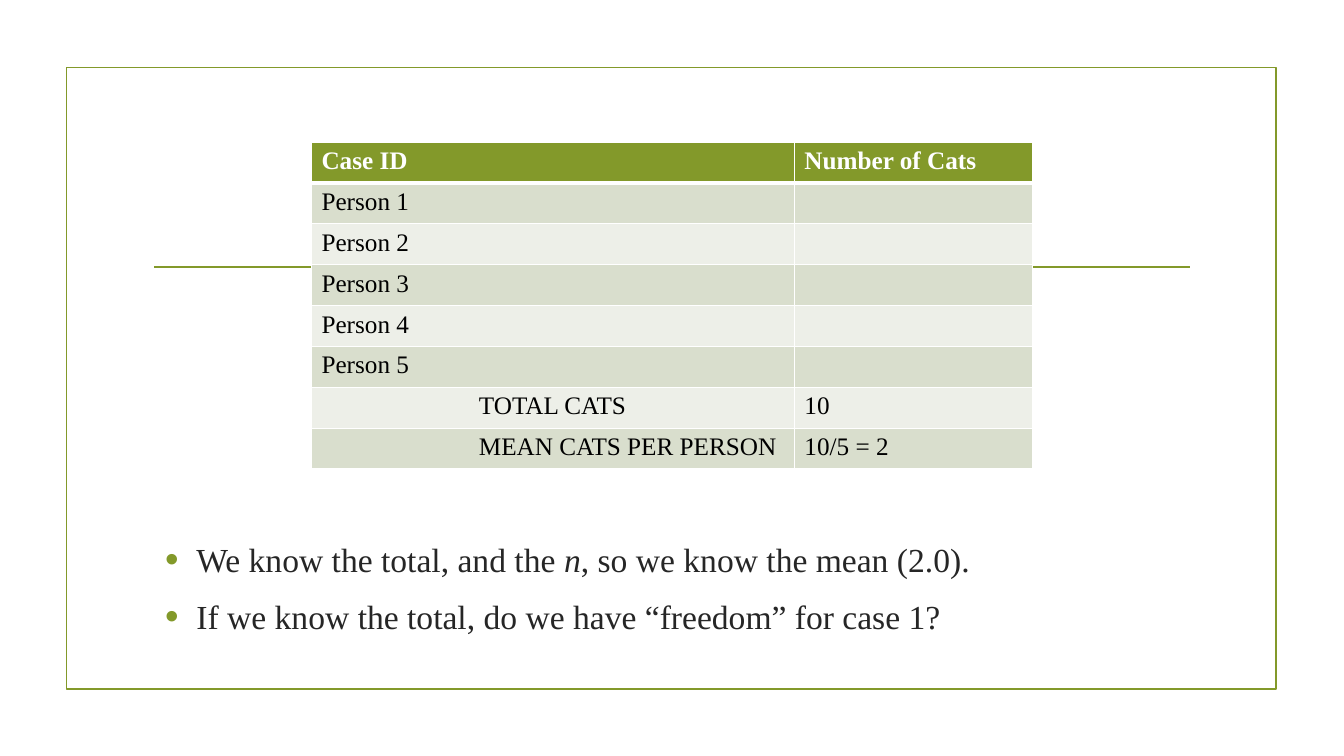
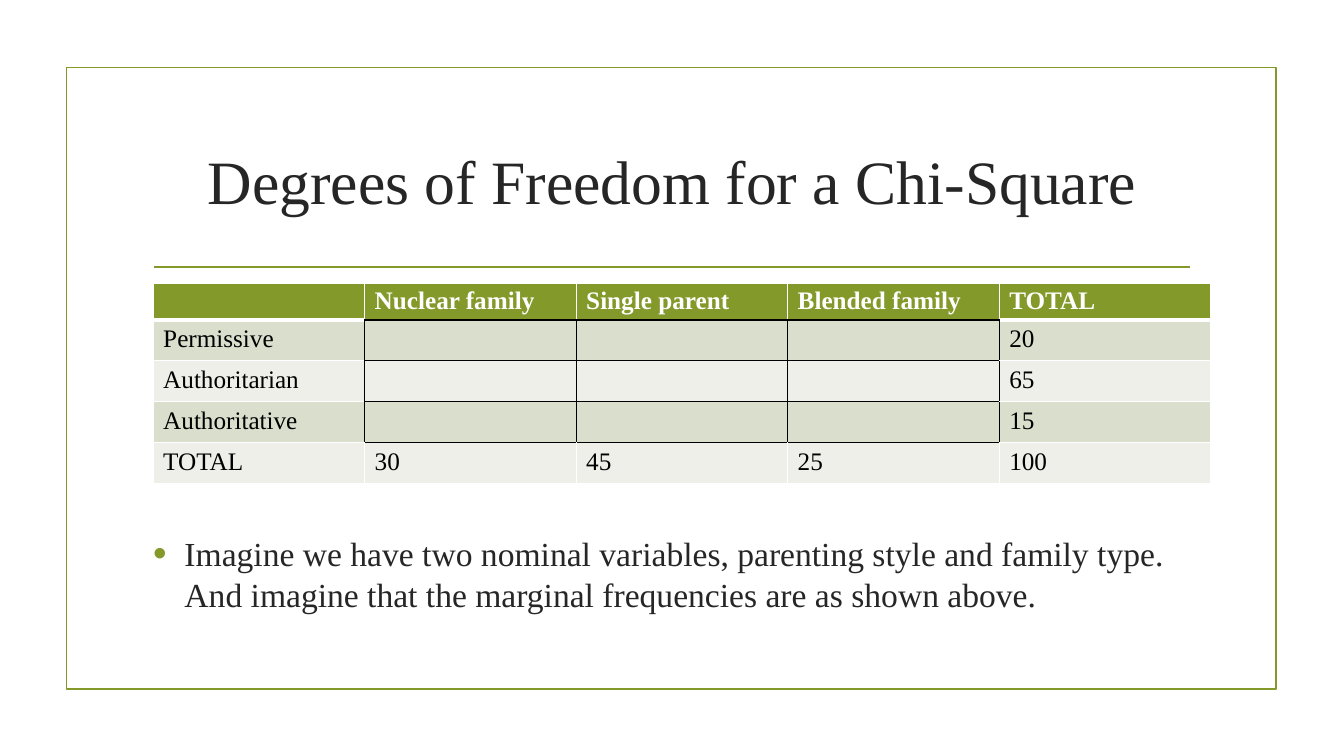
"""Build two slides on degrees of freedom, each with a table and bullets."""
from lxml import etree
from pptx import Presentation
from pptx.dml.color import RGBColor
from pptx.enum.shapes import MSO_CONNECTOR, MSO_SHAPE
from pptx.enum.text import MSO_ANCHOR, PP_ALIGN
from pptx.oxml.ns import qn
from pptx.util import Cm, Pt

RECT = MSO_SHAPE.RECTANGLE
LINE = MSO_CONNECTOR.STRAIGHT
MID = MSO_ANCHOR.MIDDLE
CENTER = PP_ALIGN.CENTER
FONT = "Times New Roman"
HUE = {"green": "83992A", "ink": "262626", "black": "000000",
       "white": "FFFFFF", "dark": "D9DECD", "light": "EDEFE8"}
WIDE = 26.67
ROW = 1.03
SIDES = {"lnL": (0, -1), "lnR": (0, 1), "lnT": (-1, 0), "lnB": (1, 0)}

SLIDES = [
    {
        "title": None,
        "points": [
            [("We know the total, and the ", False), ("n", True),
             (", so we know the mean (2.0).", False)],
            [("If we know the total, do we have “freedom” for case 1?", False)],
        ],
        "box": (3.91, 13.46, 3.6),
        "rows": [
            ("Case ID", "Number of Cats"),
            *[(f"Person {n}", "") for n in range(1, 6)],
            ("TOTAL CATS", "10"),
            ("MEAN CATS PER PERSON", "10/5 = 2"),
        ],
        "at": (7.85, 3.58), "cols": (12.17, 5.99), "head": ROW, "pad": 0.13,
        "core": set(), "inset": {(6, 0), (7, 0)},
    },
    {
        "title": "Degrees of Freedom for a Chi-Square",
        "points": [
            [("Imagine we have two nominal variables, parenting style and family "
              "type. And imagine that the marginal frequencies are as shown above.",
              False)],
        ],
        "box": (3.61, 13.31, 3.1),
        "rows": [
            ("", "Nuclear family", "Single parent", "Blended family", "TOTAL"),
            ("Permissive", "", "", "", "20"),
            ("Authoritarian", "", "", "", "65"),
            ("Authoritative", "", "", "", "15"),
            ("TOTAL", "30", "45", "25", "100"),
        ],
        "at": (3.86, 7.14), "cols": (5.33,) * 5, "head": 0.9, "pad": 0.08,
        "core": {(r, c) for r in range(1, 4) for c in range(1, 4)},
        "inset": set(),
    },
]


def rgb(name):
    return RGBColor.from_string(HUE[name])


def sub(node, tag, **attrs):
    return etree.SubElement(node, qn(f"a:{tag}"), attrs)


def add_run(para, text, size, hue, bold=False, slant=False):
    run = para.add_run()
    run.text = text
    font = run.font
    font.name, font.size, font.bold, font.italic = FONT, Pt(size), bold, slant
    font.color.rgb = rgb(hue)


def add_frame(slide):
    frame = slide.shapes.add_shape(RECT, Cm(1.68), Cm(1.7), Cm(30.48), Cm(15.67))
    frame.shadow.inherit = False
    frame.fill.background()
    rule = slide.shapes.add_connector(LINE, Cm(3.89), Cm(6.73), Cm(30), Cm(6.73))
    sub(rule._element.spPr, "effectLst")
    for shape in (frame, rule):
        shape.line.color.rgb = rgb("green")
        shape.line.width = Pt(1.25)


def add_box(slide, left, top, high):
    box = slide.shapes.add_textbox(Cm(left), Cm(top), Cm(WIDE), Cm(high))
    box.text_frame.word_wrap = True
    return box.text_frame


def add_title(slide, text):
    frame = add_box(slide, 3.61, 2.72, 3.63)
    frame.vertical_anchor = MID
    para = frame.paragraphs[0]
    para.alignment = CENTER
    add_run(para, text, 44, "ink")


def add_points(slide, points, box):
    frame = add_box(slide, *box)
    for i, parts in enumerate(points):
        para = frame.add_paragraph() if i else frame.paragraphs[0]
        props = para._p.get_or_add_pPr()
        props.set("marL", str(Cm(0.79)))
        props.set("indent", str(-Cm(0.79)))
        sub(sub(props, "buClr"), "srgbClr", val=HUE["green"])
        sub(props, "buSzPct", val="115000")
        sub(props, "buFont", typeface="Arial")
        sub(props, "buChar", char="•")
        para.space_before = Pt(5.5 if i else 0)
        para.space_after = Pt(6)
        for text, slant in parts:
            add_run(para, text, 24, "ink", slant=slant)


def set_edges(cell, r, c, core):
    props = cell._tc.get_or_add_tcPr()
    for tag, (down, right) in SIDES.items():
        near = (r + down, c + right)
        dark = (r, c) in core or near in core
        under = {r, near[0]} == {0, 1}
        width = Pt(3 if under and not dark else 1)
        edge = sub(props, tag, w=str(width))
        hue = HUE["black" if dark else "white"]
        sub(sub(edge, "solidFill"), "srgbClr", val=hue)


def add_grid(slide, data):
    rows, cols = data["rows"], data["cols"]
    left, top = data["at"]
    highs = [data["head"]] + [ROW] * (len(rows) - 1)
    table = slide.shapes.add_table(len(rows), len(cols), Cm(left), Cm(top),
                                   Cm(sum(cols)), Cm(sum(highs))).table
    table.horz_banding = False
    for c, width in enumerate(cols):
        table.columns[c].width = Cm(width)
    for r, row in enumerate(rows):
        table.rows[r].height = Cm(highs[r])
        fill = ("dark" if r % 2 else "light") if r else "green"
        for c, text in enumerate(row):
            cell = table.cell(r, c)
            set_edges(cell, r, c, data["core"])
            cell.fill.solid()
            cell.fill.fore_color.rgb = rgb(fill)
            if r == 0:
                cell.margin_top = cell.margin_bottom = Cm(data["pad"])
            if (r, c) in data["inset"]:
                cell.margin_left = Cm(4.22)
            if text:
                add_run(cell.text_frame.paragraphs[0], text, 18,
                        "black" if r else "white", bold=r == 0)


def main():
    deck = Presentation()
    deck.slide_width, deck.slide_height = Cm(33.87), Cm(19.05)
    for data in SLIDES:
        slide = deck.slides.add_slide(deck.slide_layouts[6])
        add_frame(slide)
        if data["title"]:
            add_title(slide, data["title"])
        add_points(slide, data["points"], data["box"])
        add_grid(slide, data)
    deck.save("out.pptx")


if __name__ == "__main__":
    main()
